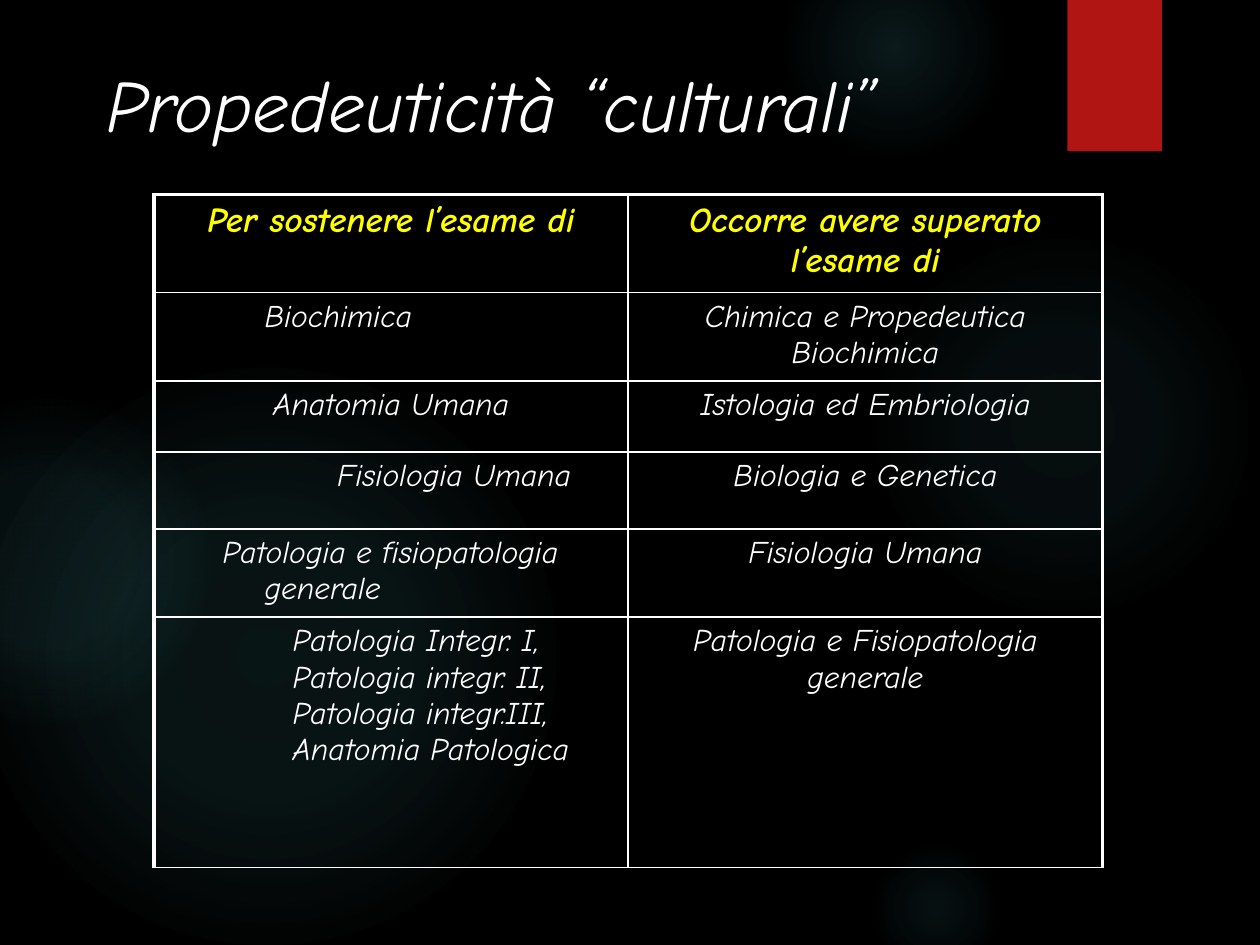
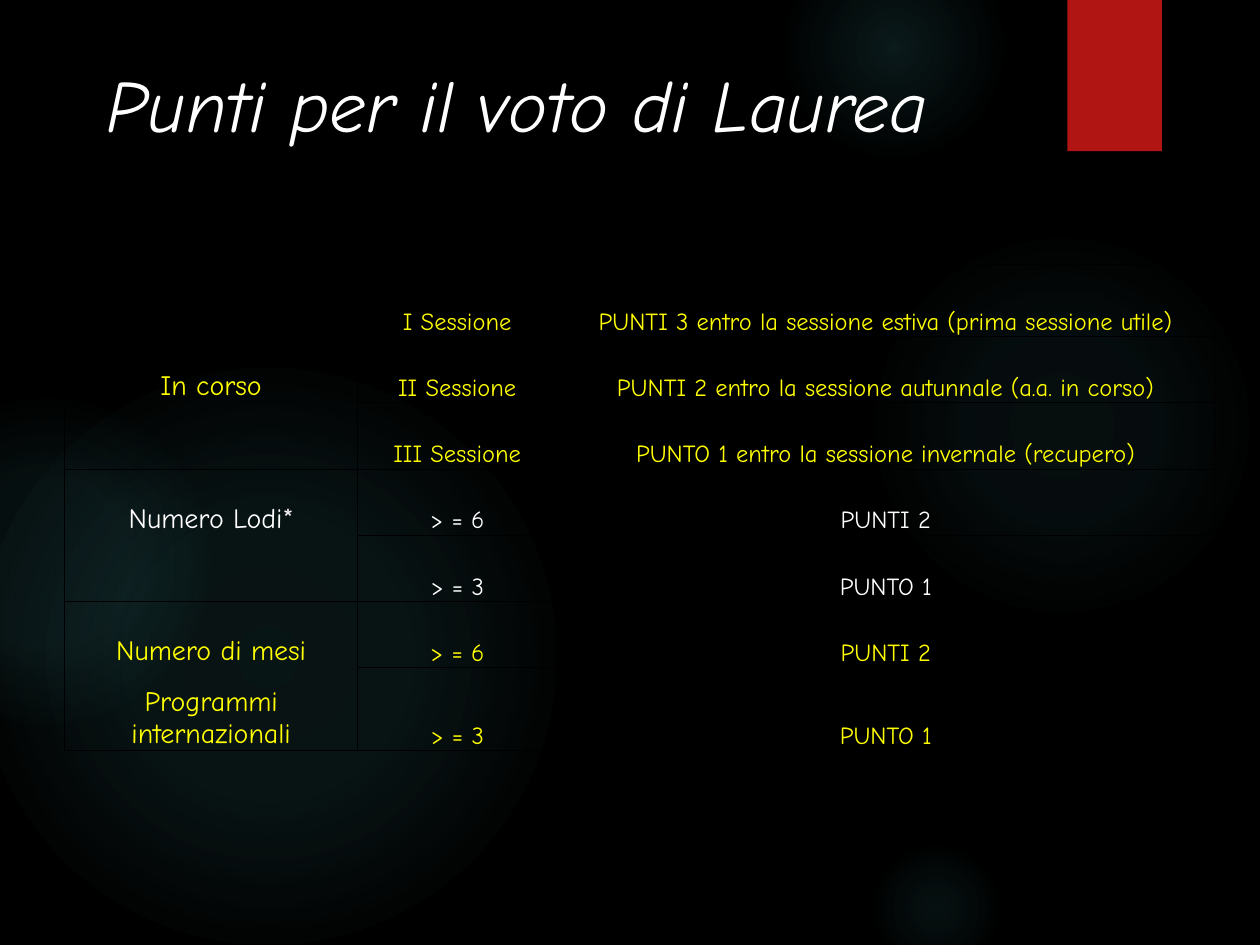
"""Builds two slides on exam prerequisites and degree points."""
import pptx
import pptx.util
import pptx.dml.color
import pptx.enum.shapes
import pptx.enum.text
import pptx.oxml
import pptx.oxml.ns

Pt = pptx.util.Pt
rgb = pptx.dml.color.RGBColor.from_string
SHAPE = pptx.enum.shapes.MSO_SHAPE
ALIGN = pptx.enum.text.PP_ALIGN
ANCHOR = pptx.enum.text.MSO_ANCHOR
NS = pptx.oxml.ns.nsdecls("a")

BLACK, WHITE, YELLOW, RED, GLOW = "000000", "FFFFFF", "FFFF00", "B01513", "50B9C1"
FONT = "Comic Neue"
GLOWS = [
    (496, 132, 222, [(0, 7), (36, 6), (69, 0)]),
    (448, -36, 126, [(0, 14), (36, 7), (73, 0)]),
    (496, 480, 78, [(0, 9), (36, 5), (66, 0)]),
    (-12, 210, 330, [(0, 11), (36, 10), (75, 0)]),
    (-66, 228, 186, [(0, 8), (36, 8), (72, 0)]),
]


def write(tf, text, size=18, color=WHITE, bold=False, italic=False,
          align=ALIGN.CENTER, margin=0, indent=0):
    tf.word_wrap = True
    p = tf.paragraphs[0]
    p.alignment = align
    if margin:
        pPr = p._p.get_or_add_pPr()
        pPr.set("marL", str(Pt(margin)))
        pPr.set("indent", str(Pt(indent)))
    r = p.add_run()
    r.text = text
    r.font.name = FONT
    r.font.size = Pt(size)
    r.font.bold = bold
    r.font.italic = italic
    r.font.color.rgb = rgb(color)


def set_borders(cell, color, widths):
    tcPr = cell._tc.get_or_add_tcPr()
    for side, width in zip("LRTB", widths):
        paint = f'<a:solidFill><a:srgbClr val="{color}"/></a:solidFill>' if width else "<a:noFill/>"
        tcPr.append(pptx.oxml.parse_xml(
            f'<a:ln{side} {NS} w="{Pt(width)}">{paint}</a:ln{side}>'))


prs = pptx.Presentation()
prs.slide_width, prs.slide_height = Pt(720), Pt(540)

slides, tables = [], []
for title, left, top, col_widths, row_heights in [
    ("Propedeuticità “culturali”", 88, 111.3, [271, 271], [56, 49, 40.5, 44, 48.5, 143]),
    ("Punti per il voto di Laurea", 36.9, 151, [167.5, 113.8, 376], [41.4] + [37.8] * 5 + [47.5]),
]:
    s = prs.slides.add_slide(prs.slide_layouts[6])
    s.background.fill.solid()
    s.background.fill.fore_color.rgb = rgb(BLACK)

    for x, y, size, stops in GLOWS:
        sp = s.shapes.add_shape(SHAPE.OVAL, Pt(x), Pt(y), Pt(size), Pt(size))
        sp.shadow.inherit = False
        sp.line.fill.background()
        sp.fill.gradient()
        grad = sp._element.spPr.find(pptx.oxml.ns.qn("a:gradFill"))
        marks = "".join(
            f'<a:gs pos="{pos * 1000}"><a:srgbClr val="{GLOW}">'
            f'<a:alpha val="{alpha * 1000}"/></a:srgbClr></a:gs>' for pos, alpha in stops)
        grad.getparent().replace(grad, pptx.oxml.parse_xml(
            f'<a:gradFill {NS} rotWithShape="1"><a:gsLst>{marks}</a:gsLst><a:path path="circle">'
            '<a:fillToRect l="50000" t="50000" r="50000" b="50000"/></a:path></a:gradFill>'))

    sp = s.shapes.add_shape(SHAPE.RECTANGLE, Pt(610), Pt(0), Pt(54), Pt(86.4))
    sp.shadow.inherit = False
    sp.line.fill.background()
    sp.fill.solid()
    sp.fill.fore_color.rgb = rgb(RED)

    tf = s.shapes.add_textbox(Pt(54), Pt(30), Pt(612), Pt(90)).text_frame
    write(tf, title, size=42, italic=True, align=ALIGN.LEFT)

    table = s.shapes.add_table(
        len(row_heights), len(col_widths), Pt(left), Pt(top),
        Pt(sum(col_widths)), Pt(sum(row_heights))).table
    table.first_row = table.horz_banding = False
    for column, width in zip(table.columns, col_widths):
        column.width = Pt(width)
    for row, height in zip(table.rows, row_heights):
        row.height = Pt(height)
    tables.append(table)

exams, points = tables

header = dict(size=20, color=YELLOW, bold=True)
prerequisites = [
    ("Per sostenere l’esame di", "Occorre avere superato l’esame di", header),
    ("Biochimica", "Chimica e Propedeutica Biochimica", dict(align=ALIGN.LEFT, margin=56)),
    ("Anatomia Umana", "Istologia ed Embriologia", {}),
    ("Fisiologia Umana", "Biologia e Genetica", dict(margin=72)),
    ("Patologia e fisiopatologia generale", "Fisiologia Umana",
     dict(align=ALIGN.LEFT, margin=56, indent=-24)),
    ("Patologia Integr. I, Patologia integr. II, Patologia integr.III, Anatomia Patologica",
     "Patologia e Fisiopatologia generale", dict(align=ALIGN.LEFT, margin=72)),
]
for i, (exam, required, style) in enumerate(prerequisites):
    for j, text in enumerate((exam, required)):
        cell = exams.cell(i, j)
        set_borders(cell, WHITE, [1 if j else 2.25, 2.25 if j else 1, 1 if i else 2.25, 1])
        cell.fill.background()
        write(cell.text_frame, text, italic=True, **(style if j == 0 or i == 0 else {}))

criteria = [
    ("", "I Sessione", "PUNTI 3 entro la sessione estiva (prima sessione utile)", YELLOW),
    ("In corso", "II Sessione", "PUNTI 2 entro la sessione autunnale (a.a. in corso)", YELLOW),
    ("", "III Sessione", "PUNTO 1 entro la sessione invernale (recupero)", YELLOW),
    ("Numero Lodi*", "> = 6", "PUNTI 2", WHITE),
    ("", "> = 3", "PUNTO 1", WHITE),
    ("Numero di mesi", "> = 6", "PUNTI 2", YELLOW),
    ("Programmi internazionali", "> = 3", "PUNTO 1", YELLOW),
]
group_starts = {0, 3, 5, 7}
for i, (*texts, color) in enumerate(criteria):
    for j, text in enumerate(texts):
        cell = points.cell(i, j)
        edges = [0.5 if j or k in group_starts else 0 for k in (i, i + 1)]
        set_borders(cell, BLACK, [0.5, 0.5] + edges)
        cell.fill.background()
        cell.vertical_anchor = ANCHOR.BOTTOM
        cell.margin_left = cell.margin_right = cell.margin_top = Pt(0.72)
        cell.margin_bottom = Pt(0)
        if text:
            write(cell.text_frame, text, size=14 if j else 16, color=color)

prs.save("out.pptx")
